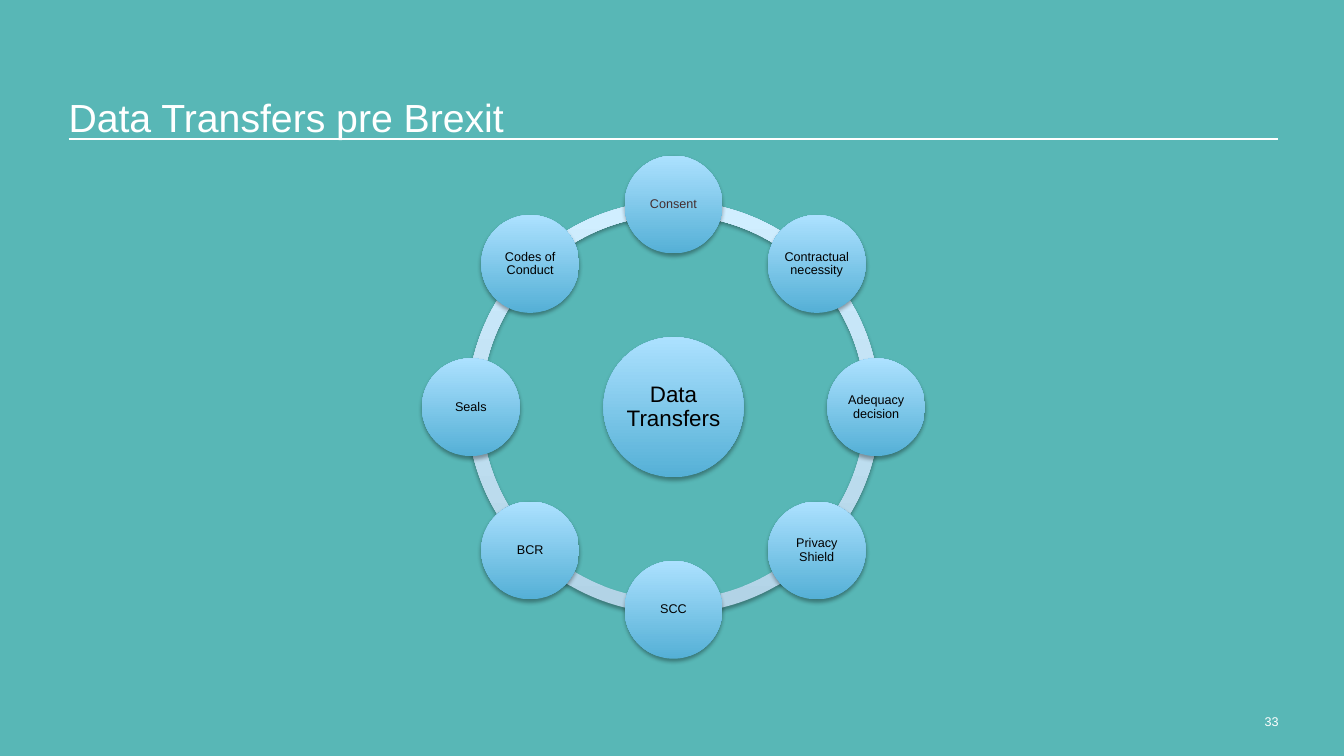
import math
import pptx
import pptx.util
import pptx.dml.color
import pptx.enum.shapes
import pptx.enum.text
import pptx.oxml
import pptx.oxml.ns

# Content
TITLE = "Data Transfers pre Brexit"
HUB = "Data Transfers"
NODES = ["Consent", "Contractual necessity", "Adequacy decision", "Privacy Shield",
         "SCC", "BCR", "Seals", "Codes of Conduct"]
PAGE = "33"

# Colours and font
RGB = pptx.dml.color.RGBColor
TEAL = RGB(0x58, 0xB7, 0xB6)
WHITE = RGB(0xFF, 0xFF, 0xFF)
BLACK = RGB(0, 0, 0)
BROWN = RGB(0x44, 0x2E, 0x30)
DISC = RGB(0x55, 0xB0, 0xD6), RGB(0xAC, 0xE1, 0xFF)
RING = RGB(0xB2, 0xD3, 0xE6), RGB(0xD0, 0xEE, 0xFF)
FONT = "Arial"

# Layout in inches
WIDE, HIGH = 13.33, 7.5
LEFT, RIGHT = 0.68, 12.68
MID_X, MID_Y = 6.68, 4.04
ORBIT = 2.01
RING_SIZE, HUB_SIZE, NODE_SIZE = 4.09, 1.39, 0.97
BAND = 0.034
FULL = 216  # a full turn in the arc's adjustment units

SHAPE = pptx.enum.shapes.MSO_SHAPE
ALIGN = pptx.enum.text.PP_ALIGN
ANCHOR = pptx.enum.text.MSO_ANCHOR
Inches, Pt = pptx.util.Inches, pptx.util.Pt
SHADOW = (
    '<a:outerShdw %s blurRad="40000" dist="23000" dir="5400000" rotWithShape="0">'
    '<a:srgbClr val="000000"><a:alpha val="35000"/></a:srgbClr></a:outerShdw>'
    % pptx.oxml.ns.nsdecls("a"))


def write(shape, text, size, color, align, anchor, inset=0):
    frame = shape.text_frame
    frame.word_wrap = True
    frame.vertical_anchor = anchor
    frame.margin_left = frame.margin_right = Inches(inset)
    frame.margin_top = frame.margin_bottom = Inches(inset)
    frame.text = text
    para = frame.paragraphs[0]
    para.alignment = align
    font = para.runs[0].font
    font.name, font.size, font.color.rgb = FONT, Pt(size), color
    return para


def place(kind, x, y, size, colors):
    """Add a shaded square shape centred on x, y."""
    shape = slide.shapes.add_shape(kind, Inches(x - size / 2), Inches(y - size / 2),
                                   Inches(size), Inches(size))
    shape.fill.gradient()
    shape.fill.gradient_angle = 90
    for stop, color in zip(shape.fill.gradient_stops, colors):
        stop.color.rgb = color
    shape.line.fill.background()
    shape.shadow.inherit = False
    effects = shape._element.spPr.find(pptx.oxml.ns.qn("a:effectLst"))
    effects.append(pptx.oxml.parse_xml(SHADOW))
    return shape


def disc(text, x, y, size, points, color, inset):
    shape = place(SHAPE.OVAL, x, y, size, DISC)
    para = write(shape, text, points, color, ALIGN.CENTER, ANCHOR.MIDDLE, inset)
    para.line_spacing = 0.9


deck = pptx.Presentation()
deck.slide_width, deck.slide_height = Inches(WIDE), Inches(HIGH)
slide = deck.slides.add_slide(deck.slide_layouts[5])
slide.background.fill.solid()
slide.background.fill.fore_color.rgb = TEAL

# Title and rule
title = slide.shapes.title
title.left, title.top = Inches(LEFT), Inches(0.91)
title.width, title.height = Inches(11.98), Inches(0.48)
write(title, TITLE, 28, WHITE, ALIGN.LEFT, ANCHOR.BOTTOM)
rule = slide.shapes.add_connector(pptx.enum.shapes.MSO_CONNECTOR.STRAIGHT,
                                  Inches(LEFT), Inches(1.38), Inches(RIGHT), Inches(1.38))
rule.line.color.rgb, rule.line.width = WHITE, Pt(1.25)
rule._element.spPr.append(pptx.oxml.parse_xml(
    "<a:effectLst %s/>" % pptx.oxml.ns.nsdecls("a")))

# Ring: one arc between each pair of neighbours
step = FULL / len(NODES)
for i in range(len(NODES)):
    arc = place(SHAPE.BLOCK_ARC, MID_X, MID_Y, RING_SIZE, RING)
    start = (FULL * 3 / 4 - (i + 1) * step) % FULL
    arc.adjustments[0] = start
    arc.adjustments[1] = (start + step) % FULL
    arc.adjustments[2] = BAND

# Hub and nodes, clockwise from the top
disc(HUB, MID_X, MID_Y, HUB_SIZE, 16, BLACK, 0.02)
for i, name in enumerate(NODES):
    turn = 2 * math.pi * i / len(NODES)
    disc(name, MID_X + ORBIT * math.sin(turn), MID_Y - ORBIT * math.cos(turn),
         NODE_SIZE, 9, BLACK if i else BROWN, 0.01)

# Page number
page = slide.shapes.add_textbox(Inches(RIGHT - 1.29), Inches(7.08), Inches(1.29), Inches(0.46))
write(page, PAGE, 9, WHITE, ALIGN.RIGHT, ANCHOR.TOP)

deck.save("out.pptx")
